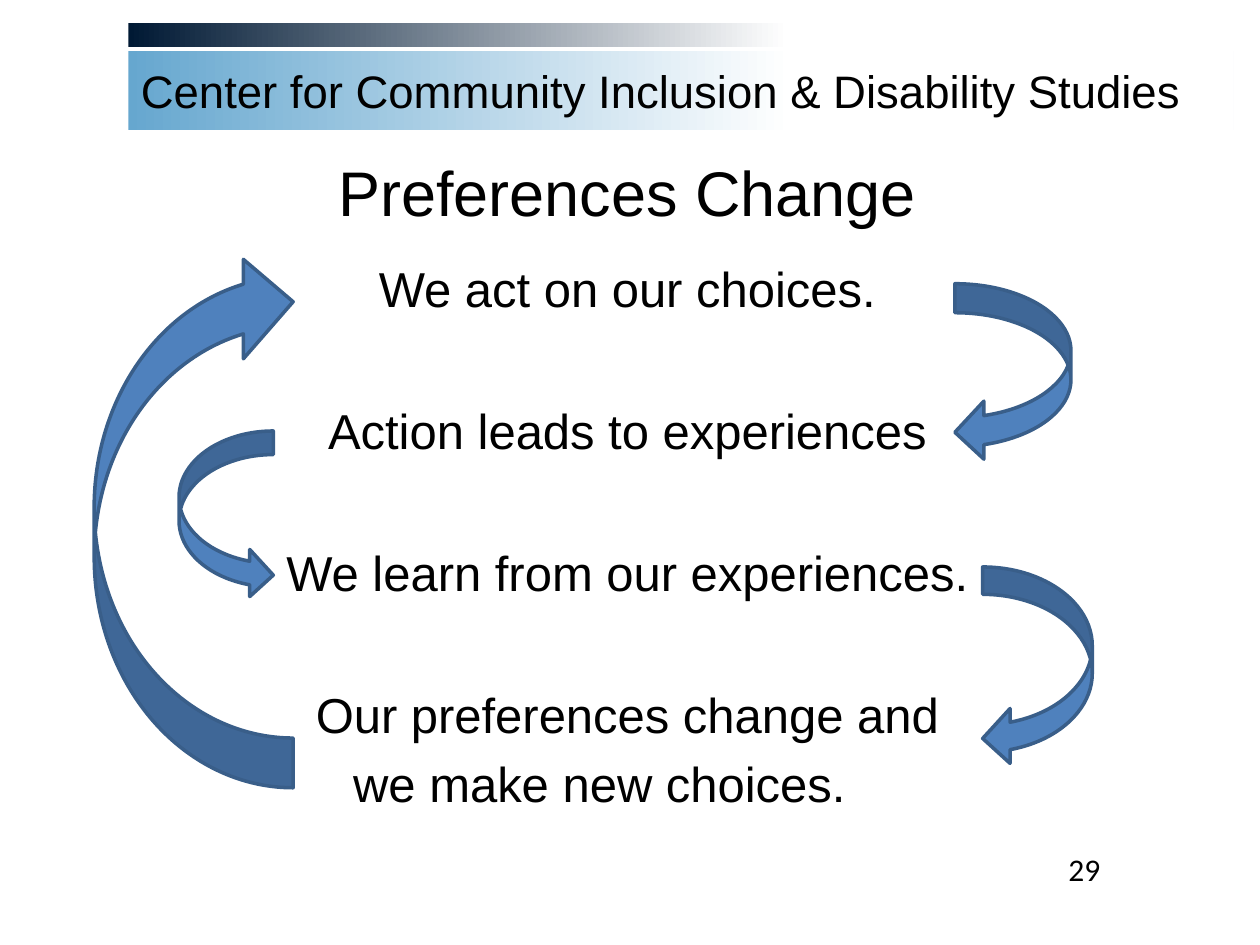
from lxml import etree
from pptx import Presentation
from pptx.dml.color import RGBColor
from pptx.enum.shapes import MSO_SHAPE
from pptx.enum.text import MSO_ANCHOR, PP_ALIGN
from pptx.oxml.ns import qn
from pptx.util import Cm, Pt

RECTANGLE = MSO_SHAPE.RECTANGLE
LEFT_ARROW = MSO_SHAPE.CURVED_LEFT_ARROW
RIGHT_ARROW = MSO_SHAPE.CURVED_RIGHT_ARROW
TOP, MIDDLE = MSO_ANCHOR.TOP, MSO_ANCHOR.MIDDLE
LEFT, CENTER = PP_ALIGN.LEFT, PP_ALIGN.CENTER

BLACK, WHITE = "000000", "FFFFFF"
NAVY, SKY = "001934", "66A7CF"
ARROW_FILL, ARROW_LINE = "4F81BD", "395E89"

STEPS = [
    ("We act on our choices.", 0),
    ("Action leads to experiences", 47.6),
    ("We learn from our experiences.", 47.6),
    ("Our preferences change and", 47.6),
    ("we make new choices.\t", 5.6),
]
ARROWS = [
    (LEFT_ARROW, (19.25, 5.72, 2.34, 3.58)),
    (RIGHT_ARROW, (3.61, 8.69, 1.9, 3.38)),
    (LEFT_ARROW, (19.81, 11.43, 2.21, 4.01)),
]
RETURN_ARROW_BOX = (1.9, 5.08, 4.01, 10.8)


def color(hex_string):
    return RGBColor.from_string(hex_string)


def set_values(target, values):
    for name, value in values.items():
        setattr(target, name, value)


def add_shape(slide, kind, box):
    shape = slide.shapes.add_shape(kind, *map(Cm, box))
    shape.shadow.inherit = False
    return shape


def add_band(slide, box, start_color):
    band = add_shape(slide, RECTANGLE, box)
    band.line.fill.background()
    band.fill.gradient()
    band.fill.gradient_angle = 0
    stops = zip(band.fill.gradient_stops, (0, 0.6), (start_color, WHITE))
    for stop, position, stop_color in stops:
        stop.position = position
        stop.color.rgb = color(stop_color)
    return band


def add_arrow(slide, kind, box):
    arrow = add_shape(slide, kind, box)
    arrow.fill.solid()
    arrow.fill.fore_color.rgb = color(ARROW_FILL)
    arrow.line.color.rgb = color(ARROW_LINE)
    arrow.line.width = Pt(2)
    return arrow


def add_tab_stop(paragraph, position):
    tabs = etree.SubElement(paragraph._p.get_or_add_pPr(), qn("a:tabLst"))
    etree.SubElement(tabs, qn("a:tab"), pos=str(position), algn="l")


def write_text(shape, lines, size, font="Arial", alignment=LEFT, anchor=TOP):
    frame = shape.text_frame
    set_values(frame, {"word_wrap": True, "vertical_anchor": anchor})
    for index, (text, space) in enumerate(lines):
        paragraph = frame.add_paragraph() if index else frame.paragraphs[0]
        paragraph.alignment = alignment
        if space:
            paragraph.space_before = Pt(space)
        if "\t" in text:
            add_tab_stop(paragraph, Cm(11.05))
        run = paragraph.add_run()
        run.text = text
        set_values(run.font, {"name": font, "size": Pt(size)})
        run.font.color.rgb = color(BLACK)


def add_text(slide, box, lines, size, **style):
    text_box = slide.shapes.add_textbox(*map(Cm, box))
    write_text(text_box, lines, size, **style)


def main():
    presentation = Presentation()
    set_values(presentation, {"slide_width": Cm(25.4), "slide_height": Cm(19.05)})
    slide = presentation.slides.add_slide(presentation.slide_layouts[6])

    header = add_band(slide, (2.59, 1.02, 22.28, 1.6), SKY)
    center_name = "Center for Community Inclusion & Disability Studies"
    write_text(header, [(center_name, 0)], 26, anchor=MIDDLE)
    add_band(slide, (2.59, 0.46, 22.17, 0.48), NAVY)
    add_text(slide, (21.29, 17.02, 1.65, 1.02), [("29", 0)], 18, font="Calibri")

    add_text(slide, (1.19, 2.95, 22.91, 1.83), [("Preferences Change", 0)], 36,
             alignment=CENTER, anchor=MIDDLE)
    add_text(slide, (1.19, 5.08, 22.91, 10.8), STEPS, 28, alignment=CENTER)

    for kind, box in ARROWS:
        add_arrow(slide, kind, box)
    return_arrow = add_arrow(slide, RIGHT_ARROW, RETURN_ARROW_BOX)
    return_arrow.rotation = 180
    return_arrow._element.spPr.xfrm.set("flipH", "1")

    presentation.save("out.pptx")


if __name__ == "__main__":
    main()
